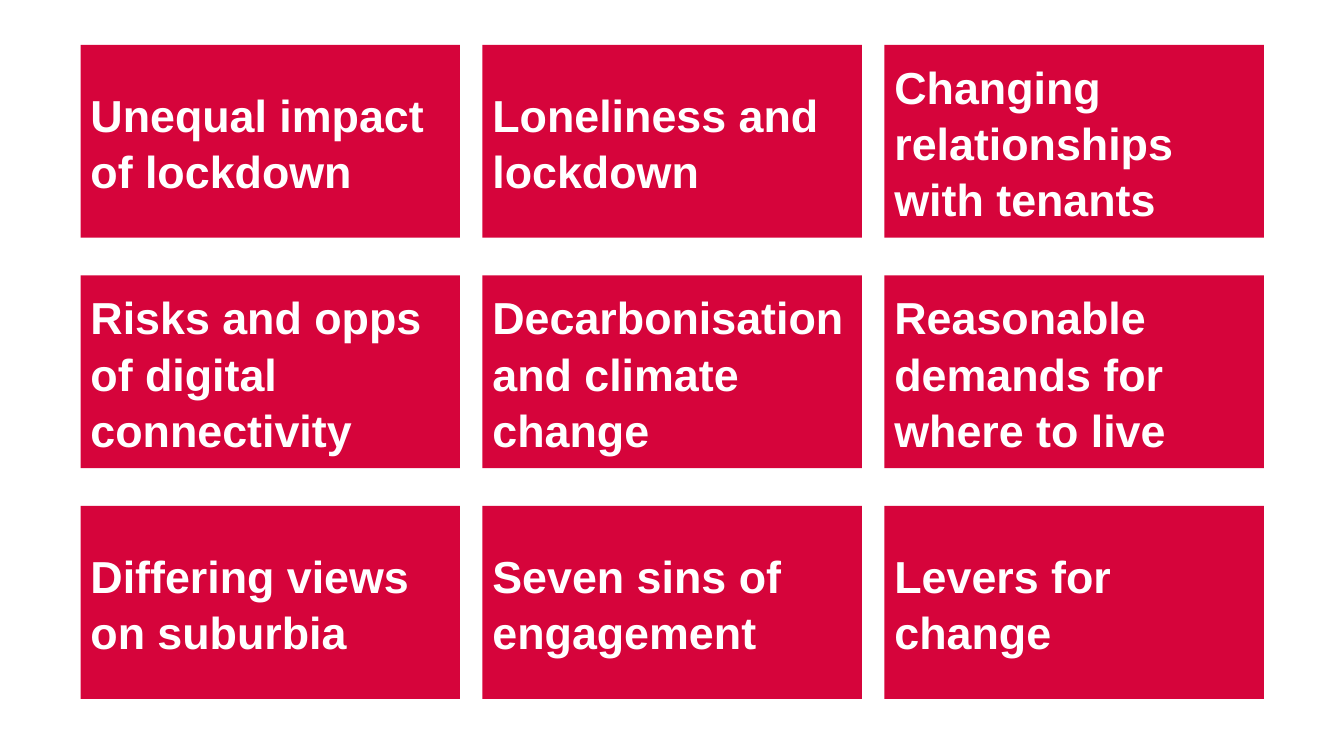
"""Build a three-by-three grid of housing theme tiles on one slide."""
from pptx import Presentation
from pptx.dml.color import RGBColor
from pptx.enum.shapes import MSO_SHAPE
from pptx.enum.text import MSO_ANCHOR, PP_ALIGN
from pptx.util import Cm, Pt

THEMES = [
    ["Unequal impact of lockdown", "Loneliness and lockdown", "Changing relationships with tenants"],
    ["Risks and opps of digital connectivity", "Decarbonisation and climate change",
     "Reasonable demands for where to live"],
    ["Differing views on suburbia", "Seven sins of engagement", "Levers for change"],
]
COLOURS = {"tile": "D6043B", "text": "FFFFFF"}
FONT_FORMAT = {"name": "Arial", "size": Pt(32), "bold": True}
PARAGRAPH_FORMAT = {"alignment": PP_ALIGN.LEFT, "line_spacing": 1.05}
FRAME_FORMAT = {"word_wrap": True, "vertical_anchor": MSO_ANCHOR.MIDDLE}
LEFT, TOP = 2.03, 1.13
TILE_WIDTH, TILE_HEIGHT = 9.56, 4.86
COLUMN_GAP, ROW_GAP = 0.57, 0.95


def apply_format(target, values):
    for name, value in values.items():
        setattr(target, name, value)


def add_tile(page, theme, row, column):
    left = LEFT + column * (TILE_WIDTH + COLUMN_GAP)
    top = TOP + row * (TILE_HEIGHT + ROW_GAP)
    box = page.shapes.add_shape(
        MSO_SHAPE.RECTANGLE, Cm(left), Cm(top), Cm(TILE_WIDTH), Cm(TILE_HEIGHT))
    box.shadow.inherit = False
    box.fill.solid()
    box.fill.fore_color.rgb = RGBColor.from_string(COLOURS["tile"])
    box.line.fill.background()
    apply_format(box.text_frame, FRAME_FORMAT)
    para = box.text_frame.paragraphs[0]
    apply_format(para, PARAGRAPH_FORMAT)
    span = para.add_run()
    span.text = theme
    apply_format(span.font, FONT_FORMAT)
    span.font.color.rgb = RGBColor.from_string(COLOURS["text"])


def main():
    deck = Presentation()
    deck.slide_width, deck.slide_height = Cm(33.87), Cm(19.05)
    page = deck.slides.add_slide(deck.slide_layouts.get_by_name("Blank"))
    for row, themes in enumerate(THEMES):
        for column, theme in enumerate(themes):
            add_tile(page, theme, row, column)
    deck.save("out.pptx")


if __name__ == "__main__":
    main()
